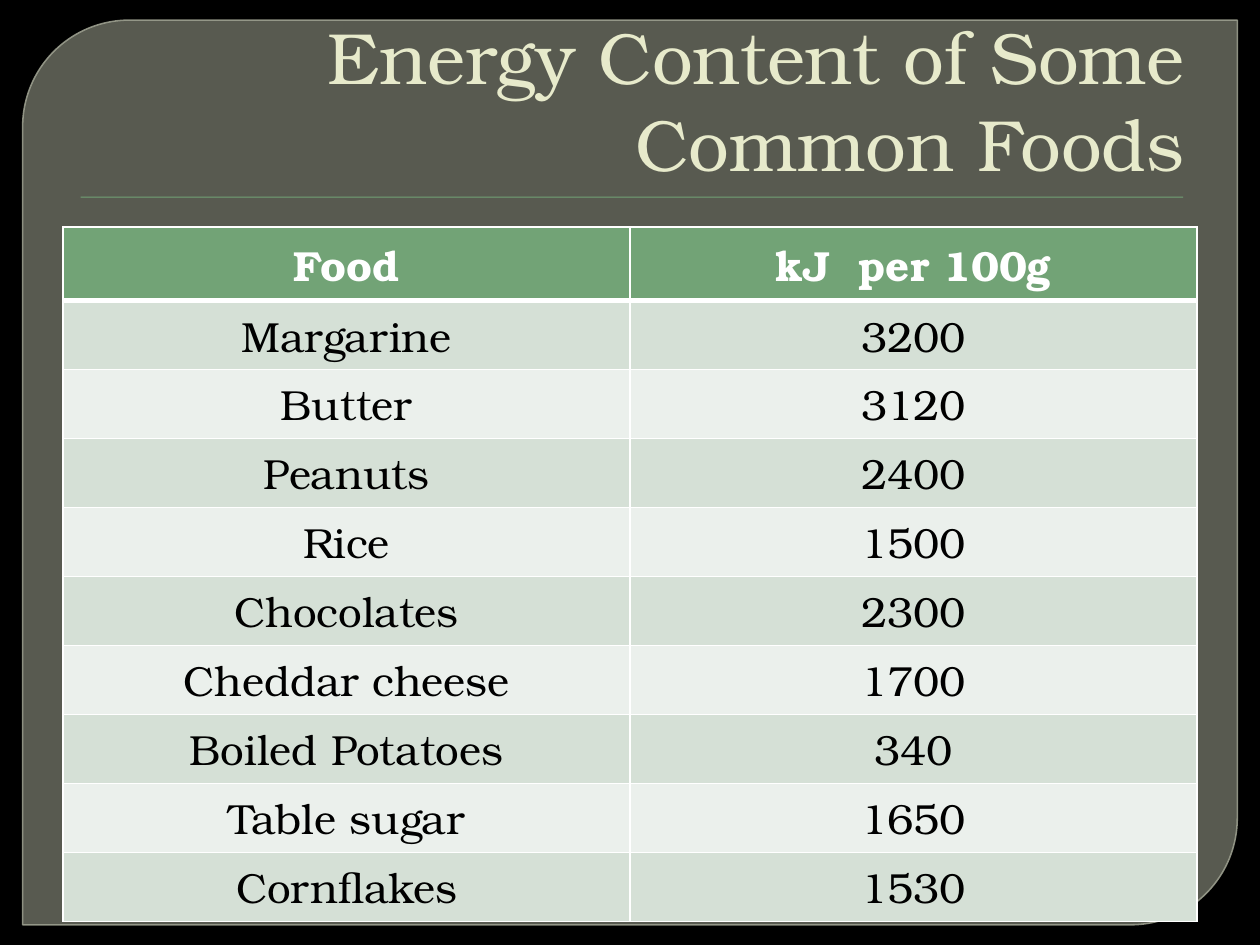
from lxml.etree import SubElement
from pptx import Presentation
from pptx.dml.color import RGBColor
from pptx.enum.shapes import MSO_SHAPE as Preset
from pptx.enum.text import MSO_ANCHOR as Anchor, MSO_AUTO_SIZE as AutoSize, PP_ALIGN as Align
from pptx.oxml.ns import qn
from pptx.util import Inches, Pt

TITLE = "Energy Content of Some Common Foods"
FOODS = [
    ("Food", "kJ  per 100g"),
    ("Margarine", "3200"),
    ("Butter", "3120"),
    ("Peanuts", "2400"),
    ("Rice", "1500"),
    ("Chocolates", "2300"),
    ("Cheddar cheese", "1700"),
    ("Boiled Potatoes", "340"),
    ("Table sugar", "1650"),
    ("Cornflakes", "1530"),
]
COLORS = {
    "back": "000000", "panel": "888B7B", "edge": "9DA090", "accent": "72A376",
    "title": "E7EACB", "white": "FFFFFF", "text": "000000",
    "odd": "D5E0D6", "even": "EBF0EC",
}
FONT = "TeX Gyre Bonum"
WIDTH, HEIGHT = 10, 7.5
MARGIN = WIDTH * 0.05
TABLE_TOP, TABLE_HEIGHT = HEIGHT * 0.24, 5


def color(name):
    return RGBColor.from_string(COLORS[name])


def write(frame, text, size, ink, align, bold=False):
    para = frame.paragraphs[0]
    para.alignment = align
    span = para.add_run()
    span.text = text
    span.font.name = FONT
    span.font.size = Pt(size)
    span.font.bold = bold
    span.font.color.rgb = color(ink)
    return para


def set_alpha(fill, percent):
    tint = fill._xPr.find(qn("a:solidFill"))[0]
    SubElement(tint, qn("a:alpha"), val=str(percent * 1000))


def add_block(page, preset, area, fill):
    block = page.shapes.add_shape(preset, *map(Inches, area))
    block.shadow.inherit = False
    block.fill.solid()
    block.fill.fore_color.rgb = color(fill)
    block.line.fill.background()
    return block


def add_shadow(block):
    effects = block._element.spPr.find(qn("a:effectLst"))
    shadow = SubElement(effects, qn("a:outerShdw"), blurRad=str(Pt(1)),
                        dist=str(Pt(1)), dir="5400000", rotWithShape="0")
    tint = SubElement(shadow, qn("a:srgbClr"), val=COLORS["back"])
    SubElement(tint, qn("a:alpha"), val="75000")


def add_borders(cell, **widths):
    props = cell._tc.get_or_add_tcPr()
    for side in "LRTB":
        line = SubElement(props, qn(f"a:ln{side}"), w=str(Pt(widths.get(side, 1))))
        fill = SubElement(line, qn("a:solidFill"))
        SubElement(fill, qn("a:srgbClr"), val=COLORS["white"])


def add_backdrop(page):
    page.background.fill.solid()
    page.background.fill.fore_color.rgb = color("back")
    panel = add_block(page, Preset.ROUND_2_DIAG_RECTANGLE, (0.18, 0.16, 9.64, 7.18), "panel")
    panel.adjustments[0], panel.adjustments[1] = 0.118, 0
    set_alpha(panel.fill, 65)
    panel.line.color.rgb = color("edge")
    panel.line.width = Pt(0.87)
    set_alpha(panel.line.fill, 88)
    rule = add_block(page, Preset.RECTANGLE, (0.64, 1.56, 8.75, 0.01), "accent")
    add_shadow(rule)


def place_title(page):
    title = page.shapes.title
    page.shapes._spTree.append(title._element)
    title.left, title.top = Inches(MARGIN), Inches(0.28)
    title.width, title.height = Inches(WIDTH - 2 * MARGIN), Inches(1.25)
    frame = title.text_frame
    frame.word_wrap = True
    frame.auto_size = AutoSize.NONE
    frame.vertical_anchor = Anchor.BOTTOM
    para = write(frame, TITLE, 41.4, "title", Align.RIGHT)
    para._p.get_or_add_pPr().set("marL", str(Inches(0.06)))


def add_food_table(page):
    area = (MARGIN, TABLE_TOP, WIDTH - 2 * MARGIN, TABLE_HEIGHT)
    table = page.shapes.add_table(len(FOODS), len(FOODS[0]), *map(Inches, area)).table
    for row, entries in enumerate(FOODS):
        header = row == 0
        shade = "accent" if header else "odd" if row % 2 else "even"
        for column, text in enumerate(entries):
            cell = table.cell(row, column)
            add_borders(cell, T=3 if row == 1 else 1, B=3 if header else 1)
            cell.fill.solid()
            cell.fill.fore_color.rgb = color(shade)
            write(cell.text_frame, text, 24, "white" if header else "text",
                  Align.CENTER, bold=header)


def main():
    deck = Presentation()
    deck.slide_width, deck.slide_height = Inches(WIDTH), Inches(HEIGHT)
    page = deck.slides.add_slide(deck.slide_layouts[5])
    add_backdrop(page)
    place_title(page)
    add_food_table(page)
    deck.save("out.pptx")


if __name__ == "__main__":
    main()
